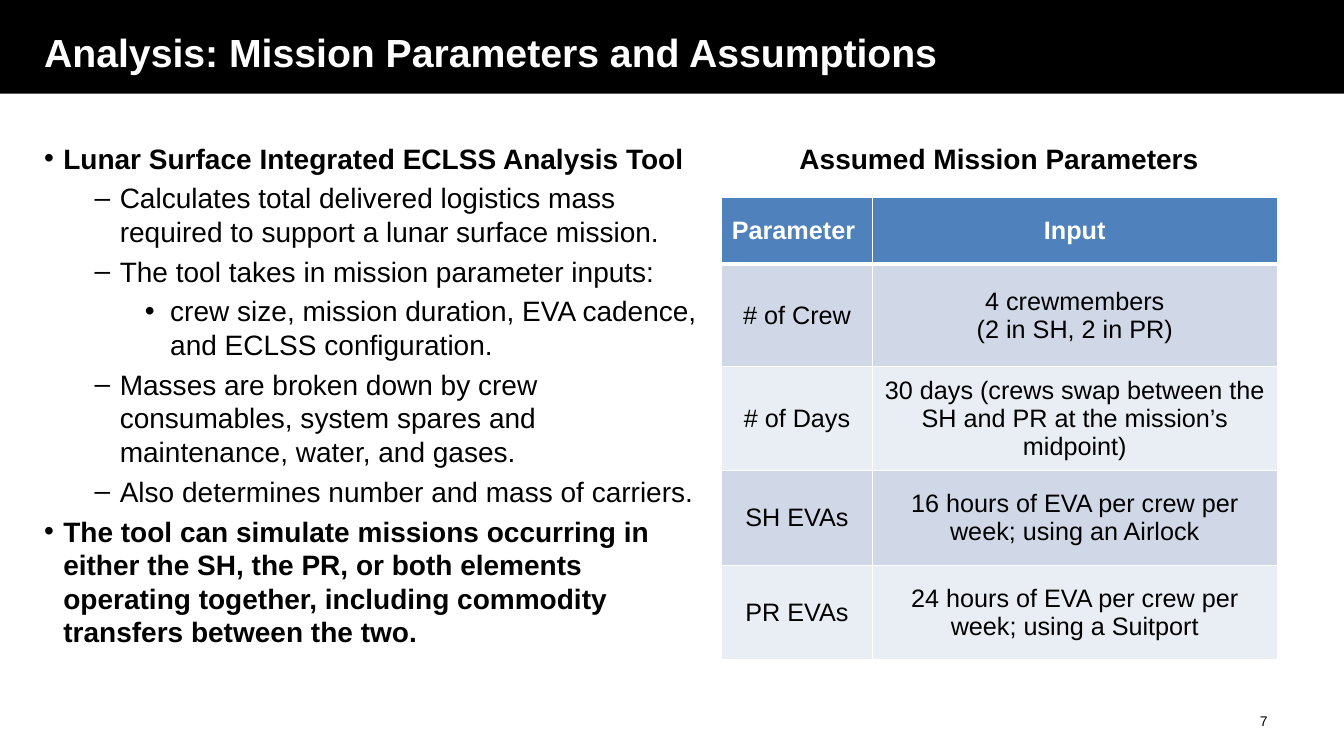
from lxml import etree
from pptx import Presentation
from pptx.dml.color import RGBColor
from pptx.enum.shapes import MSO_SHAPE
from pptx.enum.text import MSO_ANCHOR, PP_ALIGN
from pptx.oxml.ns import qn
from pptx.util import Inches, Pt

LEFT, CENTER, RIGHT = PP_ALIGN.LEFT, PP_ALIGN.CENTER, PP_ALIGN.RIGHT
TOP, MIDDLE = MSO_ANCHOR.TOP, MSO_ANCHOR.MIDDLE
RECTANGLE = MSO_SHAPE.RECTANGLE

WIDTH, HEIGHT = Inches(13.33), Inches(7.5)
COLORS = {
    "black": "000000",
    "white": "FFFFFF",
    "header": "4F81BD",
    "band_dark": "D0D8E8",
    "band_light": "E9EDF4",
}

# Text formats
TITLE = {"size": Pt(28), "bold": True, "color": "white"}
HEADING = {"size": Pt(20), "bold": True, "color": "black"}
BODY = {**HEADING, "bold": False}
TABLE_HEADER = {"size": Pt(18), "bold": True, "color": "white"}
TABLE_BODY = {"size": Pt(18), "bold": False, "color": "black"}
PAGE_NUMBER = {"size": Pt(10), "bold": False, "color": "black"}

# Bullet levels: character, text indent and hanging indent in inches, format
LEVELS = [
    ("•", 0.19, 0.19, HEADING),
    ("–", 0.75, 0.25, BODY),
    ("•", 1.25, 0.25, BODY),
]
BULLETS = [
    (0, "Lunar Surface Integrated ECLSS Analysis Tool"),
    (1, "Calculates total delivered logistics mass required to support a lunar surface mission."),
    (1, "The tool takes in mission parameter inputs:"),
    (2, "crew size, mission duration, EVA cadence, and ECLSS configuration."),
    (1, "Masses are broken down by crew consumables, system spares and maintenance, water, and gases."),
    (1, "Also determines number and mass of carriers."),
    (0, "The tool can simulate missions occurring in either the SH, the PR, or both elements "
        "operating together, including commodity transfers between the two."),
]

# Table rows: height in percent of the slide, then the cells
PARAMETERS = [
    (8.8, "Parameter ", "Input"),
    (13.6, "# of Crew", "4 crewmembers\n(2 in SH, 2 in PR)"),
    (13.73, "# of Days", "30 days (crews swap between the SH and PR at the mission’s midpoint)"),
    (12.53, "SH EVAs", "16 hours of EVA per crew per week; using an Airlock"),
    (12.53, "PR EVAs", "24 hours of EVA per crew per week; using a Suitport"),
]
COLUMN_SHARES = [11.18, 30.16]


def across(percent):
    return int(WIDTH * percent / 100)


def down(percent):
    return int(HEIGHT * percent / 100)


def place(left, top, width, height):
    return across(left), down(top), across(width), down(height)


def rgb(name):
    return RGBColor.from_string(COLORS[name])


def format_paragraph(paragraph, style, align):
    paragraph.alignment = align
    paragraph.font.name = "Arial"
    paragraph.font.color.rgb = rgb(style["color"])
    for name in ("size", "bold"):
        setattr(paragraph.font, name, style[name])


def fill_text(frame, text, style, align):
    frame.word_wrap = True
    frame.text = text
    for paragraph in frame.paragraphs:
        format_paragraph(paragraph, style, align)


def add_text(slide, box, text, style, align=LEFT, anchor=TOP):
    frame = slide.shapes.add_textbox(*place(*box)).text_frame
    frame.vertical_anchor = anchor
    fill_text(frame, text, style, align)


def add_band(slide, box, color):
    band = slide.shapes.add_shape(RECTANGLE, *place(*box))
    band.shadow.inherit = False
    band.fill.solid()
    band.fill.fore_color.rgb = rgb(color)
    band.line.fill.background()


def add_bullets(slide, box, items):
    frame = slide.shapes.add_textbox(*place(*box)).text_frame
    frame.word_wrap = True
    for index, (level, text) in enumerate(items):
        paragraph = frame.add_paragraph() if index else frame.paragraphs[0]
        character, indent, hanging, style = LEVELS[level]
        paragraph.text = text
        paragraph.level = level
        if index:
            paragraph.space_before = Pt(4.4)
        properties = paragraph._p.get_or_add_pPr()
        properties.set("marL", str(Inches(indent)))
        properties.set("indent", str(-Inches(hanging)))
        etree.SubElement(properties, qn("a:buFont")).set("typeface", "Arial")
        etree.SubElement(properties, qn("a:buChar")).set("char", character)
        format_paragraph(paragraph, style, LEFT)


def set_borders(cell, widths):
    """Draw white borders; widths are points for left, right, top, bottom."""
    properties = cell._tc.get_or_add_tcPr()
    for position, (side, width) in enumerate(zip("LRTB", widths)):
        line = etree.Element(qn(f"a:ln{side}"), w=str(Pt(width)))
        fill = etree.SubElement(line, qn("a:solidFill"))
        etree.SubElement(fill, qn("a:srgbClr")).set("val", COLORS["white"])
        properties.insert(position, line)


def format_cell(cell, text, row):
    margins = {"margin_left": Inches(0.07), "margin_right": Inches(0.07),
               "margin_top": 0, "margin_bottom": 0}
    for name, value in margins.items():
        setattr(cell, name, value)
    cell.vertical_anchor = MIDDLE
    fill_text(cell.text_frame, text, TABLE_BODY if row else TABLE_HEADER, CENTER)
    band = "band_dark" if row % 2 else "band_light"
    cell.fill.solid()
    cell.fill.fore_color.rgb = rgb(band if row else "header")
    # The line between header and body is heavier
    set_borders(cell, (1, 1, 3 if row == 1 else 1, 1 if row else 3))


def add_parameter_table(slide, left, top):
    box = (left, top, sum(COLUMN_SHARES), sum(row[0] for row in PARAMETERS))
    table = slide.shapes.add_table(len(PARAMETERS), len(COLUMN_SHARES), *place(*box)).table
    for column, share in zip(table.columns, COLUMN_SHARES):
        column.width = across(share)
    for row, (share, *texts) in enumerate(PARAMETERS):
        table.rows[row].height = down(share)
        for column, text in enumerate(texts):
            format_cell(table.cell(row, column), text, row)


def main():
    presentation = Presentation()
    presentation.slide_width, presentation.slide_height = WIDTH, HEIGHT
    slide = presentation.slides.add_slide(presentation.slide_layouts[6])

    # Title band
    add_band(slide, (0, 0, 100, 12.4), "black")
    add_text(slide, (2.55, 1.47, 88.37, 10.8),
             "Analysis: Mission Parameters and Assumptions", TITLE, anchor=MIDDLE)

    # Tool description
    add_bullets(slide, (2.55, 18, 50.34, 77.47), BULLETS)

    # Mission parameters
    add_text(slide, (56.41, 18, 35.86, 5.87), "Assumed Mission Parameters", HEADING, CENTER)
    add_parameter_table(slide, 53.71, 26.13)

    # Page number
    add_text(slide, (71.72, 92.67, 23.33, 5.33), "7", PAGE_NUMBER, RIGHT, MIDDLE)

    presentation.save("out.pptx")


if __name__ == "__main__":
    main()
